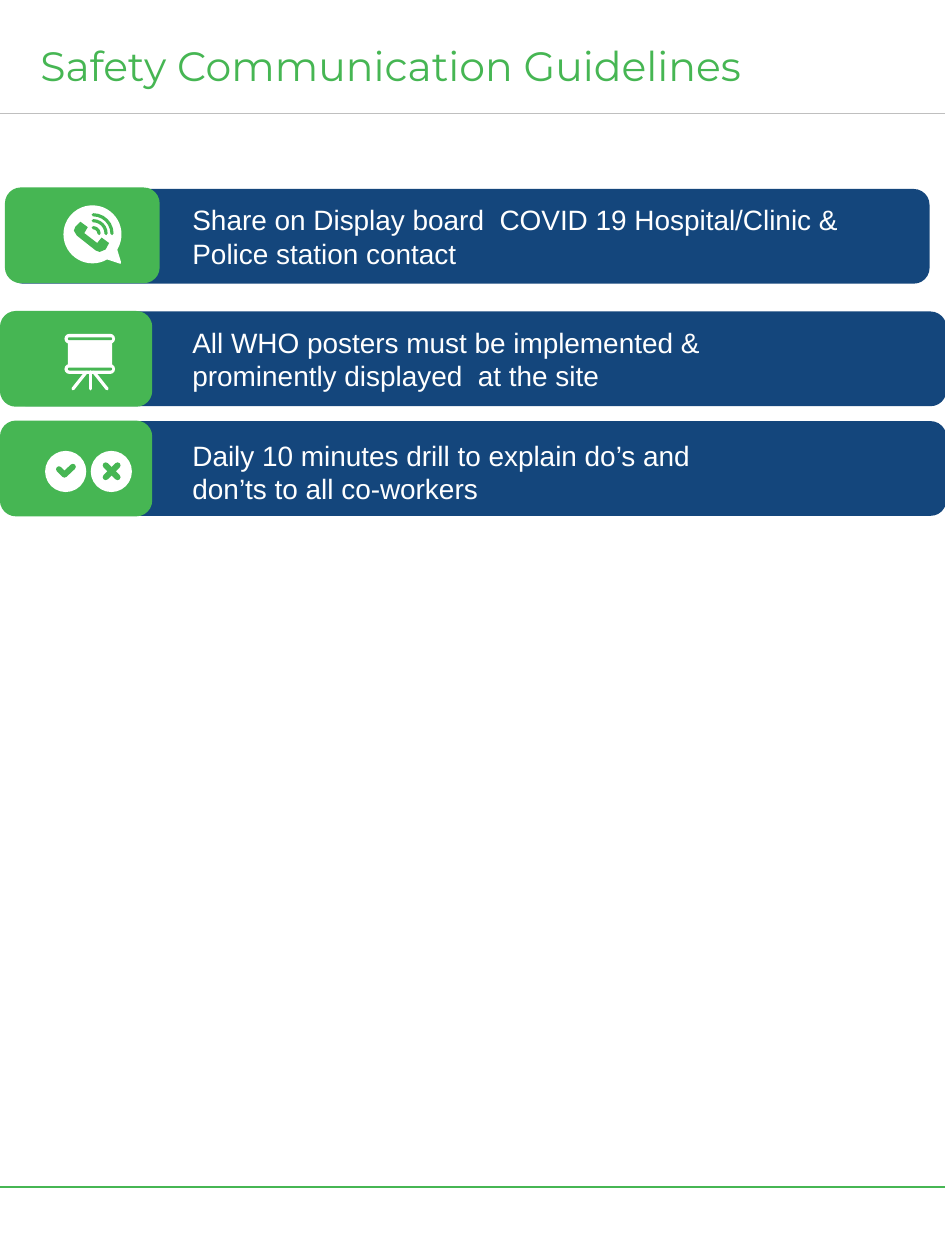
from pptx import Presentation, util as u
from pptx.dml.color import RGBColor
from pptx.enum import shapes, text
from pptx.oxml.ns import qn
from lxml import etree

THEME = {
    "green": "46B653", "navy": "14467C", "grey": "BFBFBF", "white": "FFFFFF",
    "title_font": "Montserrat", "body_font": "Arial",
    "title_size": 23.4, "body_size": 16, "rule": 0.75, "stroke": 1.8, "mark": 3.4,
}

TITLE = "Safety Communication Guidelines"
RULES = [(2.29, "grey"), (23.93, "green")]
BAR_HEIGHT, TAB_HEIGHT = 1.91, 1.93
MESSAGE_LEFT, MESSAGE_HEIGHT = 3.63, 1.63

# Each entry: wording, bar, tab (left, top, width), message (top, width)
GUIDELINES = [
    ("Share on Display board  COVID 19 Hospital/Clinic & Police station contact",
     (0.15, 3.81, 18.59), (0.1, 3.78, 3.12), (3.96, 14.02)),
    ("All WHO posters must be implemented & prominently displayed  at the site",
     (0.23, 6.28, 18.85), (0, 6.27, 3.07), (6.43, 13.26)),
    ("Daily 10 minutes drill to explain do’s and don’ts to all co-workers",
     (0.23, 8.49, 18.85), (0, 8.48, 3.07), (8.71, 11.56)),
]

BUBBLE_TAIL = [(2, 4.9), (2.16, 5.23), (2.43, 5.32), (2.44, 5.28), (2.36, 5.02)]
HANDSET = [(1.62, 4.47), (1.77, 4.58), (1.7, 4.7), (1.96, 4.9), (2.05, 4.79),
           (2.2, 4.9), (2.13, 5.03), (2.01, 5.08), (1.93, 5.05), (1.55, 4.75),
           (1.49, 4.65), (1.52, 4.57)]
SIGNAL_CENTRE, SIGNAL_RADII = (1.88, 4.71), (0.12, 0.26, 0.38)
BOARD_LEGS = [((1.74, 7.5), (1.47, 7.84)), ((1.82, 7.5), (1.82, 7.84)),
              ((1.89, 7.5), (2.16, 7.84))]
CHECK = [(1.19, 9.46), (1.3, 9.57), (1.47, 9.41)]
CROSS_CENTRE, CROSS_ARM = (2.25, 9.5), 0.12

SHAPE = shapes.MSO_SHAPE


def cm(*lengths):
    return [u.Cm(length) for length in lengths]


def colour(name):
    return RGBColor.from_string(THEME[name])


def filled(part, fill):
    part.shadow.inherit = False
    part.fill.solid()
    part.fill.fore_color.rgb = colour(fill)
    part.line.fill.background()
    return part


def stroked(part, line, width):
    part.line.color.rgb = colour(line)
    part.line.width = u.Pt(width)
    part.line._get_or_add_ln().set("cap", "rnd")
    part.shadow.inherit = False
    part.fill.background()


def block(slide, kind, box, fill):
    return filled(slide.shapes.add_shape(kind, *cm(*box)), fill)


def outline(slide, points, close):
    builder = slide.shapes.build_freeform(*cm(*points[0]))
    builder.add_line_segments([cm(*point) for point in points[1:]], close=close)
    return builder.convert_to_shape()


def connect(slide, start, end, line, width, cap="flat"):
    rule = slide.shapes.add_connector(
        shapes.MSO_CONNECTOR.STRAIGHT, *cm(*start, *end))
    rule.line.color.rgb = colour(line)
    rule.line.width = u.Pt(width)
    rule.line._get_or_add_ln().set("cap", cap)
    etree.SubElement(rule._element.spPr, qn("a:effectLst"))


def write(frame, words, font, size, fill):
    frame.text = words
    frame.word_wrap = True
    frame.auto_size = text.MSO_AUTO_SIZE.NONE
    frame.vertical_anchor = text.MSO_ANCHOR.TOP
    paragraph = frame.paragraphs[0]
    paragraph.alignment = text.PP_ALIGN.LEFT
    for run in paragraph.runs:
        run.font.name = THEME[font]
        run.font.size = u.Pt(THEME[size])
        run.font.color.rgb = colour(fill)


def draw_phone(slide):
    block(slide, SHAPE.OVAL, (1.28, 4.14, 1.17, 1.17), "white")
    filled(outline(slide, BUBBLE_TAIL, True), "white")
    filled(outline(slide, HANDSET, True), "green")
    x, y = SIGNAL_CENTRE
    for radius in SIGNAL_RADII:
        wave = slide.shapes.add_shape(
            SHAPE.ARC, *cm(x - radius, y - radius, 2 * radius, 2 * radius))
        stroked(wave, "green", THEME["stroke"])


def draw_board(slide):
    block(slide, SHAPE.RECTANGLE, (1.37, 6.83, 0.89, 0.6), "white")
    for top in (6.73, 7.34):
        for box, fill in (((1.3, top, 1.02, 0.2), "white"),
                          ((1.37, top + 0.07, 0.89, 0.06), "green")):
            rail = block(slide, SHAPE.ROUNDED_RECTANGLE, box, fill)
            rail.adjustments[0] = 0.5
    for start, end in BOARD_LEGS:
        connect(slide, start, end, "white", THEME["stroke"], "rnd")


def draw_marks(slide):
    for left in (0.91, 1.83):
        block(slide, SHAPE.OVAL, (left, 9.09, 0.83, 0.83), "white")
    stroked(outline(slide, CHECK, False), "green", THEME["mark"])
    x, y = CROSS_CENTRE
    for rise in (-CROSS_ARM, CROSS_ARM):
        connect(slide, (x - CROSS_ARM, y - rise), (x + CROSS_ARM, y + rise),
                "green", THEME["mark"], "rnd")


def main():
    deck = Presentation()
    deck.slide_width, deck.slide_height = cm(19.05, 25.4)
    slide = deck.slides.add_slide(deck.slide_layouts[5])

    title = slide.shapes.title
    title.left, title.top, title.width, title.height = cm(0.56, 0.69, 30.48, 1.6)
    write(title.text_frame, TITLE, "title_font", "title_size", "green")
    for y, line in RULES:
        connect(slide, (0, y), (19.05, y), line, THEME["rule"])

    icons = (draw_phone, draw_board, draw_marks)
    for (words, bar, tab, (top, width)), draw_icon in zip(GUIDELINES, icons):
        block(slide, SHAPE.ROUNDED_RECTANGLE, (*bar, BAR_HEIGHT), "navy")
        block(slide, SHAPE.ROUNDED_RECTANGLE, (*tab, TAB_HEIGHT), "green")
        message = slide.shapes.add_textbox(
            *cm(MESSAGE_LEFT, top, width, MESSAGE_HEIGHT))
        write(message.text_frame, words, "body_font", "body_size", "white")
        draw_icon(slide)

    deck.save("out.pptx")


if __name__ == "__main__":
    main()
